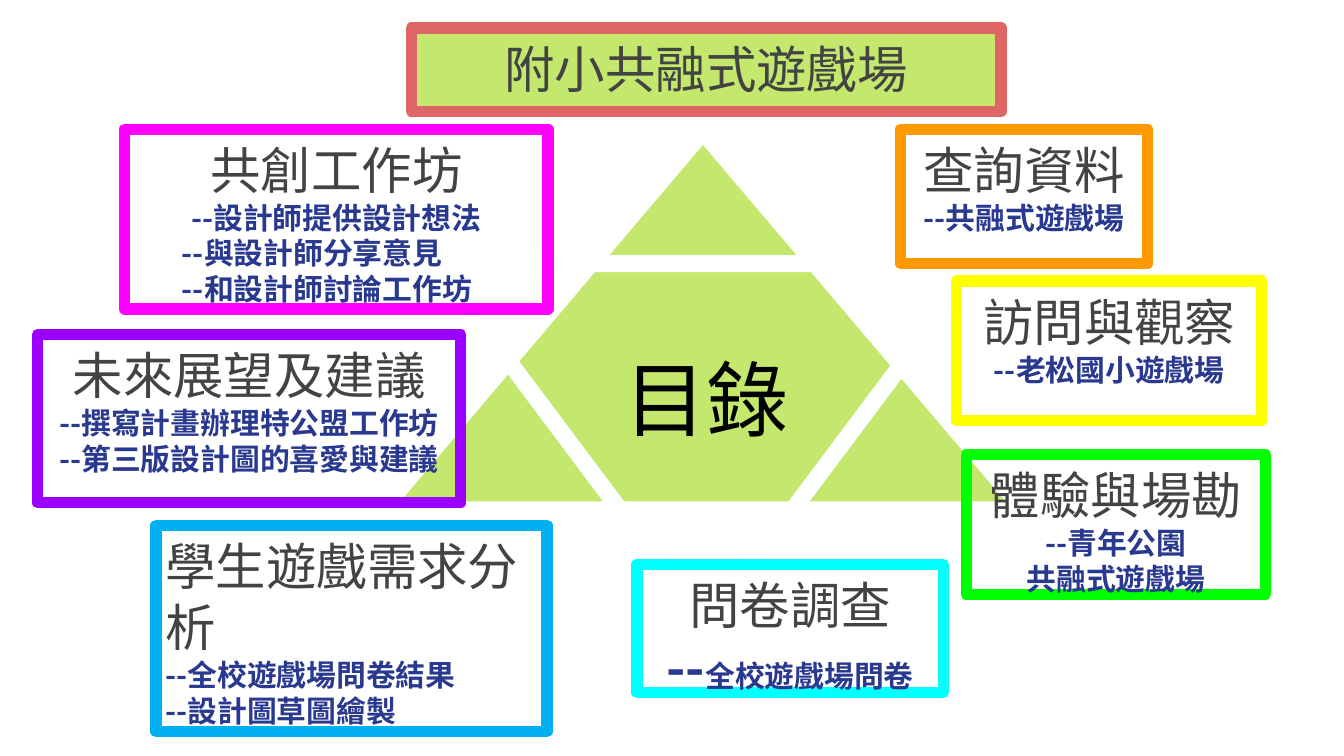
import pptx
import pptx.dml.color
import pptx.enum.shapes
import pptx.enum.text
import pptx.oxml.ns
import pptx.util
from dataclasses import dataclass
from lxml import etree

Cm = pptx.util.Cm
Pt = pptx.util.Pt
RGB = pptx.dml.color.RGBColor.from_string
SHAPES = pptx.enum.shapes.MSO_SHAPE
ALIGN = pptx.enum.text.PP_ALIGN
qn = pptx.oxml.ns.qn


@dataclass
class Theme:
    font: str = "Noto Sans CJK TC"
    green: str = "9AD604"
    green_alpha: int = 58
    white: str = "FEFFFF"
    black: str = "000000"
    heading: str = "434343"
    detail: str = "2A3990"
    title_border: str = "E06666"
    center_size: int = 44
    heading_size: int = 27
    detail_size: int = 16
    dash_size: int = 28
    border: int = 6
    divider: int = 9


theme = Theme()


def format_shape(shape, fill=None, line=None, width=theme.border):
    """Set fill, outline and text frame of a shape."""
    if fill:
        shape.fill.solid()
        shape.fill.fore_color.rgb = RGB(fill)
        color = shape._element.spPr.find(qn("a:solidFill")).find(qn("a:srgbClr"))
        etree.SubElement(color, qn("a:alpha"), val=str(theme.green_alpha * 1000))
    else:
        shape.fill.background()
    if line:
        shape.line.color.rgb = RGB(line)
        shape.line.width = Pt(width)
        etree.SubElement(shape.line._get_or_add_ln(), qn("a:round"))
    else:
        shape.line.fill.background()
    shape.shadow.inherit = False
    frame = shape.text_frame
    frame.word_wrap = True
    frame.auto_size = pptx.enum.text.MSO_AUTO_SIZE.NONE
    frame.vertical_anchor = pptx.enum.text.MSO_ANCHOR.TOP
    frame.margin_left = frame.margin_right = Cm(0.18)
    frame.margin_top = frame.margin_bottom = Cm(0.18)


def format_text(paragraph, size, color, bold=False, align=ALIGN.CENTER):
    """Align a paragraph and style its runs for Latin and Chinese text."""
    paragraph.alignment = align
    for run in paragraph.runs:
        run.font.size = Pt(size)
        run.font.bold = bold
        run.font.color.rgb = RGB(color)
        run.font.name = theme.font
        etree.SubElement(run.font._element, qn("a:ea"), typeface=theme.font)


presentation = pptx.Presentation()
presentation.slide_width = Cm(25.4)
presentation.slide_height = Cm(14.28)
slide = presentation.slides.add_slide(presentation.slide_layouts[5])

# Title
title = slide.shapes.title
title.left, title.top, title.width, title.height = Cm(7.77), Cm(0.53), Cm(11.15), Cm(1.57)
format_shape(title, theme.green, theme.title_border)
title.text_frame.text = "附小共融式遊戲場"
format_text(title.text_frame.paragraphs[0], theme.heading_size, theme.heading)

# Green triangle, divided by the outline of an inverted one
triangle = slide.shapes.add_shape(
    SHAPES.FLOWCHART_MERGE, Cm(7.57), Cm(2.74), Cm(11.43), Cm(6.73))
triangle.rotation = 180
format_shape(triangle, theme.green)
divider = slide.shapes.add_shape(
    SHAPES.FLOWCHART_MERGE, Cm(8.23), Cm(4.98), Cm(10.24), Cm(6.83))
format_shape(divider, line=theme.white, width=theme.divider)

# Centre label
label = slide.shapes.add_textbox(Cm(10.8), Cm(6.4), Cm(5.1), Cm(2.6))
format_shape(label)
label.text_frame.text = "目錄"
format_text(label.text_frame.paragraphs[0], theme.center_size, theme.black)

# Topic boxes: border colour, position and size in cm, heading, details
topics = [
    ("00FFFF", (12.04, 10.67, 5.79, 2.41), "問卷調查", ["--"]),
    ("FFFF00", (18.08, 5.31, 5.77, 2.64), "訪問與觀察", ["--老松國小遊戲場"]),
    ("00B0F0", (2.95, 9.93, 7.39, 3.89), "學生遊戲需求分析",
     ["--全校遊戲場問卷結果", "--設計圖草圖繪製"]),
    ("00FF00", (18.26, 8.59, 5.66, 2.64), "體驗與場勘",
     ["--青年公園", "共融式遊戲場"]),
    ("FF9900", (17.02, 2.44, 4.67, 2.54), "查詢資料", ["--共融式遊戲場"]),
    ("9900FF", (0.71, 6.32, 8, 3.18), "未來展望及建議",
     ["--撰寫計畫辦理特公盟工作坊", "--第三版設計圖的喜愛與建議"]),
    ("FF00FF", (2.36, 2.44, 8, 3.4), "共創工作坊",
     ["--設計師提供設計想法", "--與設計師分享意見", "--和設計師討論工作坊"]),
]
boxes = {}
for border, place, heading, details in topics:
    box = slide.shapes.add_shape(SHAPES.RECTANGLE, *[Cm(value) for value in place])
    boxes[heading] = box
    format_shape(box, line=border)
    align = ALIGN.LEFT if heading == "學生遊戲需求分析" else ALIGN.CENTER
    box.text_frame.text = heading
    format_text(box.text_frame.paragraphs[0], theme.heading_size, theme.heading, align=align)
    for detail in details:
        paragraph = box.text_frame.add_paragraph()
        paragraph.text = detail
        format_text(paragraph, theme.detail_size, theme.detail, True, align)

# The survey line opens with a larger dash
survey = boxes["問卷調查"].text_frame.paragraphs[1]
survey.add_run().text = "全校遊戲場問卷"
format_text(survey, theme.detail_size, theme.detail, True)
survey.runs[0].font.size = Pt(theme.dash_size)

# The last two workshop lines are indented from the left
for paragraph in boxes["共創工作坊"].text_frame.paragraphs[2:]:
    paragraph.alignment = ALIGN.LEFT
    paragraph._p.get_or_add_pPr().set("marL", str(Cm(0.9)))

presentation.save("out.pptx")
